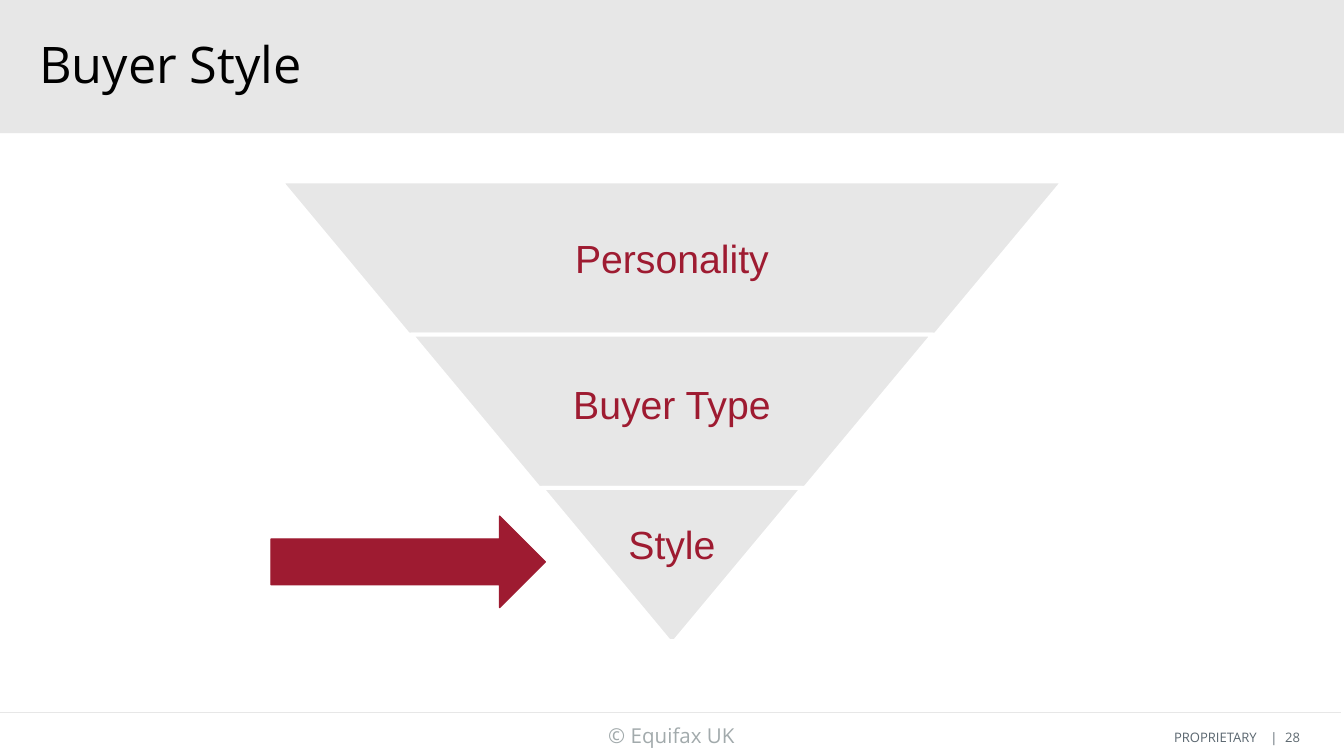
from dataclasses import dataclass

from lxml import etree
from pptx import Presentation
from pptx import util as u
from pptx.dml.color import RGBColor
from pptx.enum import shapes, text
from pptx.oxml import ns

COLORS = {
    "panel": "E7E7E7",
    "accent": "9E1B31",
    "white": "FFFFFF",
    "black": "000000",
    "copyright": "A2AAAC",
    "footer": "5B6770",
    "page": "5F6A71",
}
CENTER_X = 360
FUNNEL_TOP = 97.2
BAND_HEIGHT = 82.1
HALF_WIDTH = 209.5
BAND_TAPER = 68.4


@dataclass(frozen=True)
class Level:
    label: str
    lift: float


@dataclass(frozen=True)
class Box:
    left: float
    top: float
    width: float
    height: float

    def lengths(self) -> tuple:
        return tuple(u.Pt(v) for v in (self.left, self.top, self.width, self.height))


LEVELS = [Level("Personality", 0), Level("Buyer Type", 8), Level("Style", 22)]


def color(name: str) -> RGBColor:
    return RGBColor.from_string(COLORS[name])


def set_font(font, family: str, size: float, color_name: str) -> None:
    font.name = family
    font.size = u.Pt(size)
    font.color.rgb = color(color_name)


def set_frame(frame, top_inset: float = 0, bottom_inset: float = 0,
              anchor=text.MSO_ANCHOR.TOP, wrap: bool = True) -> None:
    frame.margin_left = frame.margin_right = 0
    frame.margin_top = u.Pt(top_inset)
    frame.margin_bottom = u.Pt(bottom_inset)
    frame.vertical_anchor = anchor
    frame.word_wrap = wrap


def paint(shape, fill: str, line: str | None = None, width: float = 0) -> None:
    shape.shadow.inherit = False
    shape.fill.solid()
    shape.fill.fore_color.rgb = color(fill)
    if line:
        shape.line.color.rgb = color(line)
        shape.line.width = u.Pt(width)
    else:
        shape.line.fill.background()


def add_header(slide, label: str) -> None:
    header = slide.shapes.add_shape(shapes.MSO_SHAPE.RECTANGLE, *Box(0, 0, 720, 71.3).lengths())
    paint(header, "panel")
    title = slide.shapes.title
    title.element.addprevious(header.element)
    title.left, title.top, title.width, title.height = Box(21, 16.5, 613.5, 54.5).lengths()
    set_frame(title.text_frame, top_inset=1)
    title.text_frame.auto_size = text.MSO_AUTO_SIZE.NONE
    heading = title.text_frame.paragraphs[0]
    heading.text = label
    heading.alignment = text.PP_ALIGN.LEFT
    set_font(heading.font, "Open Sans", 27, "black")


def add_level(slide, index: int, level: Level) -> None:
    top = FUNNEL_TOP + index * BAND_HEIGHT
    bottom = top + BAND_HEIGHT
    upper = HALF_WIDTH * (len(LEVELS) - index) / len(LEVELS)
    lower = upper - BAND_TAPER
    corners = [(CENTER_X - upper, top), (CENTER_X + upper, top),
               (CENTER_X + lower, bottom), (CENTER_X - lower, bottom)]
    points = [(u.Pt(x), u.Pt(y)) for x, y in corners]
    builder = slide.shapes.build_freeform(*points[0])
    builder.add_line_segments(points[1:], close=True)
    band = builder.convert_to_shape()
    paint(band, "panel", "white", 2.04)
    set_frame(band.text_frame, bottom_inset=level.lift, anchor=text.MSO_ANCHOR.MIDDLE)
    label = band.text_frame.paragraphs[0]
    label.text = level.label
    label.alignment = text.PP_ALIGN.CENTER
    set_font(label.font, "Arial", 21, "accent")


def add_footer_rule(slide) -> None:
    y = u.Pt(381.7)
    rule = slide.shapes.add_connector(shapes.MSO_CONNECTOR.STRAIGHT, 0, y, u.Pt(718.5), y)
    rule.line.color.rgb = color("panel")
    rule.line.width = u.Pt(0.72)
    etree.SubElement(rule.element.spPr, ns.qn("a:effectLst"))


def add_footer_text(slide, box: Box, top_inset: float):
    frame = slide.shapes.add_textbox(*box.lengths()).text_frame
    set_frame(frame, top_inset=top_inset, wrap=False)
    return frame.paragraphs[0]


def add_tab_stops(paragraph, positions: list[float]) -> None:
    properties = paragraph._p.get_or_add_pPr()
    stops = etree.SubElement(properties, ns.qn("a:tabLst"))
    for position in positions:
        etree.SubElement(stops, ns.qn("a:tab"), pos=str(u.Pt(position)), algn="l")


def add_footer(slide) -> None:
    add_footer_rule(slide)
    copyright_line = add_footer_text(slide, Box(325.8, 385.2, 70, 17.3), 2)
    copyright_line.text = "© Equifax UK"
    set_font(copyright_line.font, "Open Sans", 11, "copyright")

    marking = add_footer_text(slide, Box(629, 389.5, 73, 11.5), 1.4)
    add_tab_stops(marking, [51.5, 59.5])
    for words, color_name in (("PROPRIETARY\t|\t", "footer"), ("28", "page")):
        run = marking.add_run()
        run.text = words
        set_font(run.font, "Open Sans", 7, color_name)


def main() -> None:
    deck = Presentation()
    deck.slide_width, deck.slide_height = u.Pt(720), u.Pt(405)
    slide = deck.slides.add_slide(deck.slide_layouts[5])
    add_header(slide, "Buyer Style")
    for index, level in enumerate(LEVELS):
        add_level(slide, index, level)
    arrow = slide.shapes.add_shape(shapes.MSO_SHAPE.RIGHT_ARROW, *Box(145.2, 276.5, 147, 49).lengths())
    paint(arrow, "accent", "accent", 0.72)
    add_footer(slide)
    deck.save("out.pptx")


if __name__ == "__main__":
    main()
